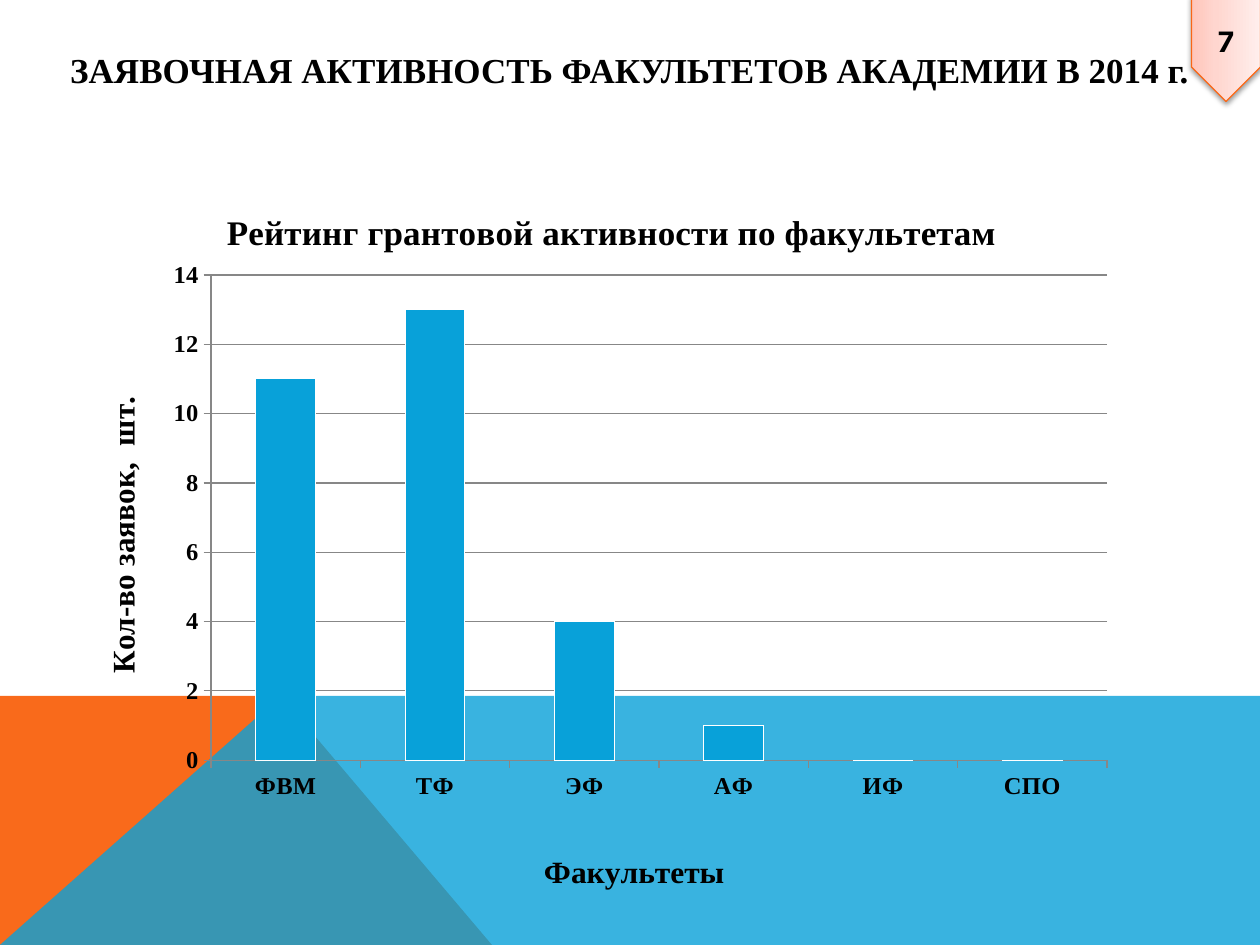
import pptx
import pptx.chart.data
import pptx.dml.color
import pptx.enum.chart
import pptx.enum.shapes
import pptx.enum.text
import pptx.oxml
import pptx.oxml.ns
import pptx.util

PX = 914400 / 126
SERIF = "Times New Roman"
NS = pptx.oxml.ns.nsdecls
qn = pptx.oxml.ns.qn
CHART = (84, 175, 1042, 724)


def px(*values):
    return [round(v * PX) for v in values]


def color(value):
    return pptx.dml.color.RGBColor.from_string(value)


def set_font(font, size, name=SERIF):
    font.name = name
    font.size = pptx.util.Pt(size)
    font.bold = True
    font.color.rgb = color("000000")


def set_text(shape, text, size, name=SERIF):
    tf = shape.text_frame
    tf.word_wrap = True
    tf.margin_left = tf.margin_right = tf.margin_top = tf.margin_bottom = 0
    tf.vertical_anchor = pptx.enum.text.MSO_ANCHOR.MIDDLE
    p = tf.paragraphs[0]
    p.text = text
    p.alignment = pptx.enum.text.PP_ALIGN.CENTER
    set_font(p.font, size, name)
    return tf


def add_polygon(s, points, fill, alpha=100):
    builder = s.shapes.build_freeform(*points[0], scale=PX)
    builder.add_line_segments(points[1:], close=True)
    sp = builder.convert_to_shape()
    sp.shadow.inherit = False
    sp.line.fill.background()
    sp.fill.solid()
    sp.fill.fore_color.rgb = color(fill)
    if alpha < 100:
        clr = sp._element.spPr.find(".//" + qn("a:srgbClr"))
        clr.append(pptx.oxml.parse_xml(f'<a:alpha {NS("a")} val="{alpha * 1000}"/>'))


def add_heading(s, text):
    sp = s.shapes.add_textbox(*px(34, 45, 1191, 49))
    set_text(sp, text, 20)


def add_page_flag(s, text):
    kind = pptx.enum.shapes.MSO_SHAPE.PENTAGON
    sp = s.shapes.add_shape(kind, *px(1173, 14, 106, 69))
    sp.rotation = 90
    sp.line.color.rgb = color("F96615")
    sp.line.width = pptx.util.Pt(0.75)
    tf = set_text(sp, text, 18, "Karla")
    tf._txBody.bodyPr.set("vert", "vert270")
    stops = "".join(
        f'<a:gs pos="{pos * 1000}"><a:srgbClr val="{value}"/></a:gs>'
        for pos, value in [(0, "FFC5BA"), (35, "FFD6CF"), (100, "FFEFED")]
    )
    spPr = sp._element.spPr
    spPr.find(qn("a:prstGeom")).addnext(pptx.oxml.parse_xml(
        f'<a:gradFill {NS("a")} rotWithShape="1"><a:gsLst>{stops}</a:gsLst>'
        '<a:lin ang="16200000" scaled="0"/></a:gradFill>'))
    spPr.append(pptx.oxml.parse_xml(
        f'<a:effectLst {NS("a")}><a:outerShdw blurRad="39370" dist="20320" '
        'dir="5400000" rotWithShape="0"><a:srgbClr val="000000">'
        '<a:alpha val="38000"/></a:srgbClr></a:outerShdw></a:effectLst>'))


def make_layout(left, top, width=None, height=None):
    x0, y0, w0, h0 = CHART
    target, size = "", ""
    if width:
        target = '<c:layoutTarget val="inner"/>'
        size = f'<c:w val="{width / w0:.2f}"/><c:h val="{height / h0:.2f}"/>'
    return pptx.oxml.parse_xml(
        f'<c:layout {NS("c")}><c:manualLayout>{target}'
        '<c:xMode val="edge"/><c:yMode val="edge"/>'
        f'<c:x val="{(left - x0) / w0:.3f}"/><c:y val="{(top - y0) / h0:.3f}"/>'
        f'{size}</c:manualLayout></c:layout>')


def drop_layout(element):
    for old in element.findall(qn("c:layout")):
        element.remove(old)


def set_title(title, text, size, left, top):
    p = title.text_frame.paragraphs[0]
    p.text = text
    set_font(p.font, size)
    element = title._element
    drop_layout(element)
    element.find(qn("c:tx")).addnext(make_layout(left, top))


def style_axis(axis, text, left, top):
    set_title(axis.axis_title, text, 18, left, top)
    set_font(axis.tick_labels.font, 14)
    axis.major_tick_mark = pptx.enum.chart.XL_TICK_MARK.OUTSIDE
    axis.format.line.color.rgb = color("878787")


def add_bar_chart(s):
    data = pptx.chart.data.CategoryChartData()
    data.categories = ["ФВМ", "ТФ", "ЭФ", "АФ", "ИФ", "СПО"]
    data.add_series("Series 1", [11, 13, 4, 1, 0, 0])
    kind = pptx.enum.chart.XL_CHART_TYPE.COLUMN_CLUSTERED
    chart = s.shapes.add_chart(kind, *px(*CHART), data).chart
    chart.has_legend = False
    chart.font.name = "Karla"
    chart.font.size = pptx.util.Pt(10)
    chart.font.color.rgb = color("000000")
    set_title(chart.chart_title, "Рейтинг грантовой активности по факультетам", 20, 220, 204)
    style_axis(chart.category_axis, "Факультеты", 538, 856)
    axis = chart.value_axis
    style_axis(axis, "Кол-во заявок,  шт.", 98, 398)
    axis.minimum_scale, axis.maximum_scale, axis.major_unit = 0, 14, 2
    axis.has_major_gridlines = True
    axis.major_gridlines.format.line.color.rgb = color("878787")
    plot = chart.plots[0]
    plot.gap_width = 150
    plot.vary_by_categories = False
    bars = plot.series[0].format
    bars.fill.solid()
    bars.fill.fore_color.rgb = color("08A1D9")
    bars.line.color.rgb = color("FFFFFF")
    area = chart._chartSpace.chart.plotArea
    drop_layout(area)
    area.insert(0, make_layout(211, 276, 894, 492))


def main():
    prs = pptx.Presentation()
    prs.slide_width, prs.slide_height = px(1260, 945)
    s = prs.slides.add_slide(prs.slide_layouts[6])
    add_polygon(s, [(0, 945), (0, 696), (281, 696), (492, 945)], "F96A1B")
    add_polygon(s, [(0, 945), (281, 696), (1260, 696), (1260, 945)], "08A1D9", 80)
    add_heading(s, "ЗАЯВОЧНАЯ АКТИВНОСТЬ ФАКУЛЬТЕТОВ АКАДЕМИИ В 2014 г.")
    add_page_flag(s, "7")
    add_bar_chart(s)
    prs.save("out.pptx")


if __name__ == "__main__":
    main()
